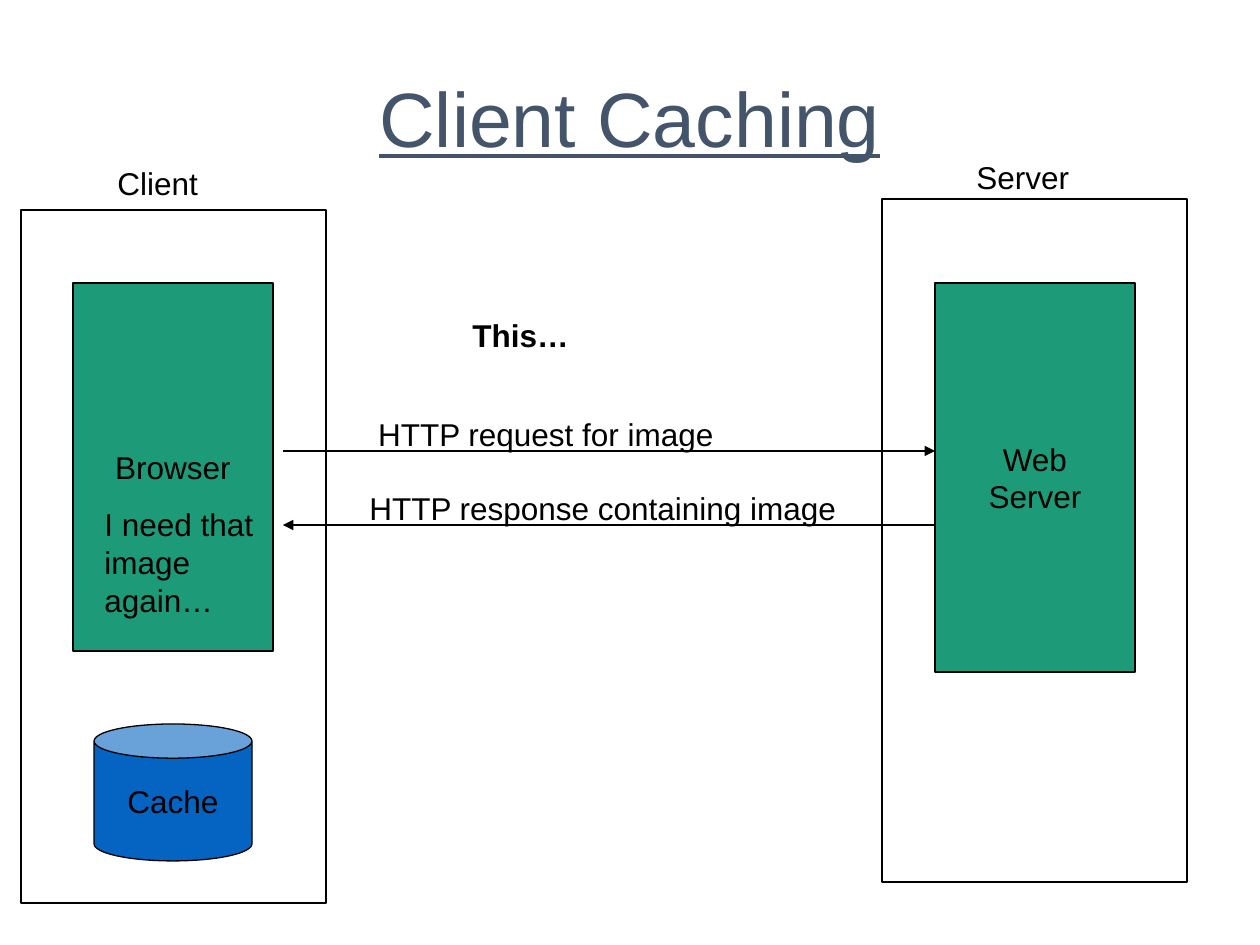
"""Build the Client Caching slide."""
from lxml.etree import SubElement
from pptx import Presentation
from pptx.dml.color import RGBColor
from pptx.enum.shapes import MSO_CONNECTOR, MSO_SHAPE
from pptx.enum.text import MSO_ANCHOR, PP_ALIGN
from pptx.oxml.ns import qn
from pptx.util import Pt

SCALE = 914400 / 126
COLORS = {"title": "44546A", "ink": "000000", "green": "1D9A78", "blue": "0563C1"}


def px(*sizes):
    return [round(size * SCALE) for size in sizes]


def color(name):
    return RGBColor.from_string(COLORS[name])


def write(shape, text, size=18, ink="ink", center=False, bold=False, under=False):
    frame = shape.text_frame
    frame.text = text
    frame.word_wrap = center
    frame.vertical_anchor = MSO_ANCHOR.MIDDLE if center else MSO_ANCHOR.TOP
    for line in frame.paragraphs:
        line.alignment = PP_ALIGN.CENTER if center else PP_ALIGN.LEFT
        for run in line.runs:
            font = run.font
            font.name, font.size = "Arial", Pt(size)
            font.bold, font.underline = bold, under
            font.color.rgb = color(ink)


def label(slide, box, text, **style):
    write(slide.shapes.add_textbox(*px(*box)), text, **style)


def block(slide, box, text="", fill=None, kind=MSO_SHAPE.RECTANGLE):
    shape = slide.shapes.add_shape(kind, *px(*box))
    shape.shadow.inherit = False
    if fill:
        shape.fill.solid()
        shape.fill.fore_color.rgb = color(fill)
    else:
        shape.fill.background()
    shape.line.color.rgb = color("ink")
    shape.line.width = Pt(0.75)
    if text:
        write(shape, text, center=True)


def arrow(slide, start, end, y):
    line = slide.shapes.add_connector(MSO_CONNECTOR.STRAIGHT, *px(start, y, end, y))
    line.line.color.rgb = color("ink")
    line.line.width = Pt(0.75)
    SubElement(line.line._get_or_add_ln(), qn("a:tailEnd"), type="triangle")
    SubElement(line._element.spPr, qn("a:effectLst"))


def main():
    deck = Presentation()
    deck.slide_width, deck.slide_height = px(1260, 945)
    slide = deck.slides.add_slide(deck.slide_layouts[6])
    label(slide, (63, 38, 1134, 158), "Client Caching",
          size=44, ink="title", center=True, under=True)

    block(slide, (73, 283, 200, 368), "Browser", "green")
    block(slide, (935, 283, 200, 389), "Web\nServer", "green")
    block(slide, (21, 210, 305, 693))
    label(slide, (105, 158, 106, 50), "Client")
    block(slide, (882, 199, 305, 683))
    label(slide, (964, 152, 118, 50), "Server")
    block(slide, (94, 724, 158, 137), "Cache", "blue", MSO_SHAPE.CAN)
    label(slide, (92, 499, 174, 126), "I need that\nimage\nagain…")

    left, right = 283, 935
    arrow(slide, left, right, 451)
    label(slide, (357, 409, 370, 50), " HTTP request for image")
    arrow(slide, right, left, 525)
    label(slide, (357, 483, 493, 50), "HTTP response containing image")
    label(slide, (460, 310, 122, 50), "This…", bold=True)
    deck.save("out.pptx")


if __name__ == "__main__":
    main()
